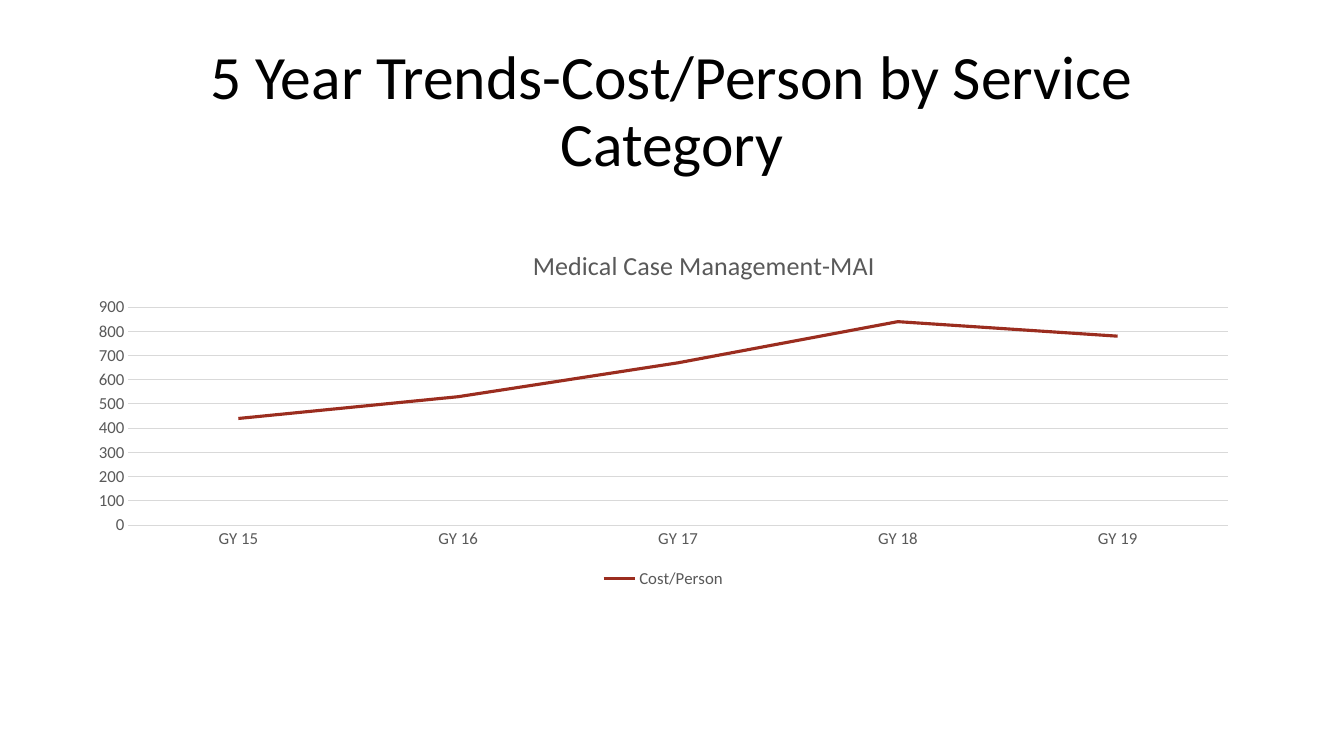
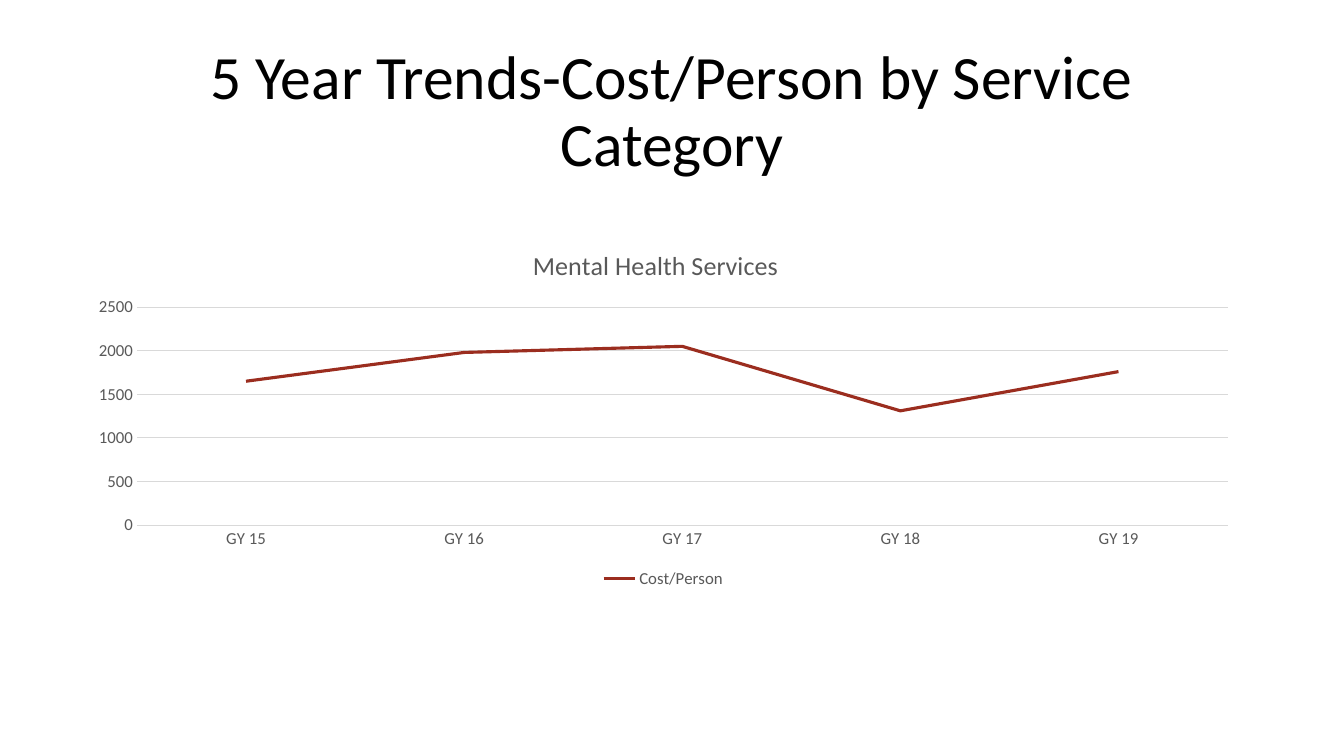
"""Builds two slides that show five-year cost per person by service category."""
from lxml import etree
from pptx import Presentation
from pptx.chart.data import CategoryChartData
from pptx.dml.color import RGBColor
from pptx.enum.chart import XL_CHART_TYPE, XL_LEGEND_POSITION, XL_TICK_MARK
from pptx.enum.text import MSO_ANCHOR, PP_ALIGN
from pptx.oxml.ns import qn
from pptx.util import Cm, Pt

LINE_CHART = XL_CHART_TYPE.LINE
BOTTOM = XL_LEGEND_POSITION.BOTTOM
NO_TICK = XL_TICK_MARK.NONE
MIDDLE = MSO_ANCHOR.MIDDLE
CENTER = PP_ALIGN.CENTER

FONT = "Calibri"
BLACK, GRAY, GRID, RED = "000000", "595959", "D9D9D9", "9B2D1F"
HEADING = "5 Year Trends-Cost/Person by Service Category"
YEARS = [f"GY {year}" for year in range(15, 20)]
SERVICES = {
    "Medical Case Management-MAI": (440, 530, 670, 840, 780),
    "Mental Health Services": (1650, 1980, 2050, 1310, 1760),
}
TITLE_LAYOUT = {"xMode": "edge", "yMode": "edge", "x": 0.385, "y": 0.04}
PLOT_LAYOUT = {"layoutTarget": "outer", "xMode": "edge", "yMode": "edge",
               "x": 0.02, "y": 0.19, "w": 0.96, "h": 0.69}


def rgb(code):
    """Return the colour for a hex string."""
    return RGBColor.from_string(code)


def write(frame, text, size, color, align=CENTER, spacing=1.0):
    """Put one formatted paragraph into a text frame."""
    paragraph = frame.paragraphs[0]
    paragraph.alignment = align
    paragraph.line_spacing = spacing
    run = paragraph.add_run()
    run.text = text
    run.font.name = FONT
    run.font.size = Pt(size)
    run.font.bold = False
    run.font.color.rgb = rgb(color)


deck = Presentation()
deck.slide_width, deck.slide_height = Cm(33.87), Cm(19.05)

for service, costs in SERVICES.items():
    slide = deck.slides.add_slide(deck.slide_layouts[6])
    heading = slide.shapes.add_textbox(Cm(2.33), Cm(1.01), Cm(29.21), Cm(3.68)).text_frame
    heading.word_wrap = True
    heading.vertical_anchor = MIDDLE
    write(heading, HEADING, 44, BLACK, spacing=0.9)

    data = CategoryChartData()
    data.categories = YEARS
    data.add_series("Cost/Person", costs)
    trend = slide.shapes.add_chart(
        LINE_CHART, Cm(1.9), Cm(5.74), Cm(29.63), Cm(9.2), data).chart
    trend.font.name, trend.font.size = FONT, Pt(10)

    trend.has_title = True
    write(trend.chart_title.text_frame, service, 18.6, GRAY)

    trend.has_legend = True
    trend.legend.position = BOTTOM
    trend.legend.include_in_layout = False

    years, amounts = trend.category_axis, trend.value_axis
    for axis in (years, amounts):
        axis.major_tick_mark = axis.minor_tick_mark = NO_TICK
    for font in (years.tick_labels.font, amounts.tick_labels.font, trend.legend.font):
        font.name, font.size = FONT, Pt(12)
        font.color.rgb = rgb(GRAY)
    amounts.has_major_gridlines = True
    amounts.format.line.fill.background()

    cost_line = trend.plots[0].series[0]
    cost_line.smooth = False
    trend.plots[0].vary_by_categories = False
    for line, color, width in ((years.format.line, GRID, 0.75),
                               (amounts.major_gridlines.format.line, GRID, 0.75),
                               (cost_line.format.line, RED, 2.25)):
        line.color.rgb = rgb(color)
        line.width = Pt(width)

    chart_xml = trend.element.find(qn("c:chart"))
    for tag, position, settings in (("c:title", 1, TITLE_LAYOUT),
                                    ("c:plotArea", 0, PLOT_LAYOUT)):
        part = chart_xml.find(qn(tag))
        for old_layout in part.findall(qn("c:layout")):
            part.remove(old_layout)
        layout = etree.Element(qn("c:layout"))
        manual = etree.SubElement(layout, qn("c:manualLayout"))
        for key, value in settings.items():
            etree.SubElement(manual, qn(f"c:{key}"), val=str(value))
        part.insert(position, layout)

deck.save("out.pptx")
